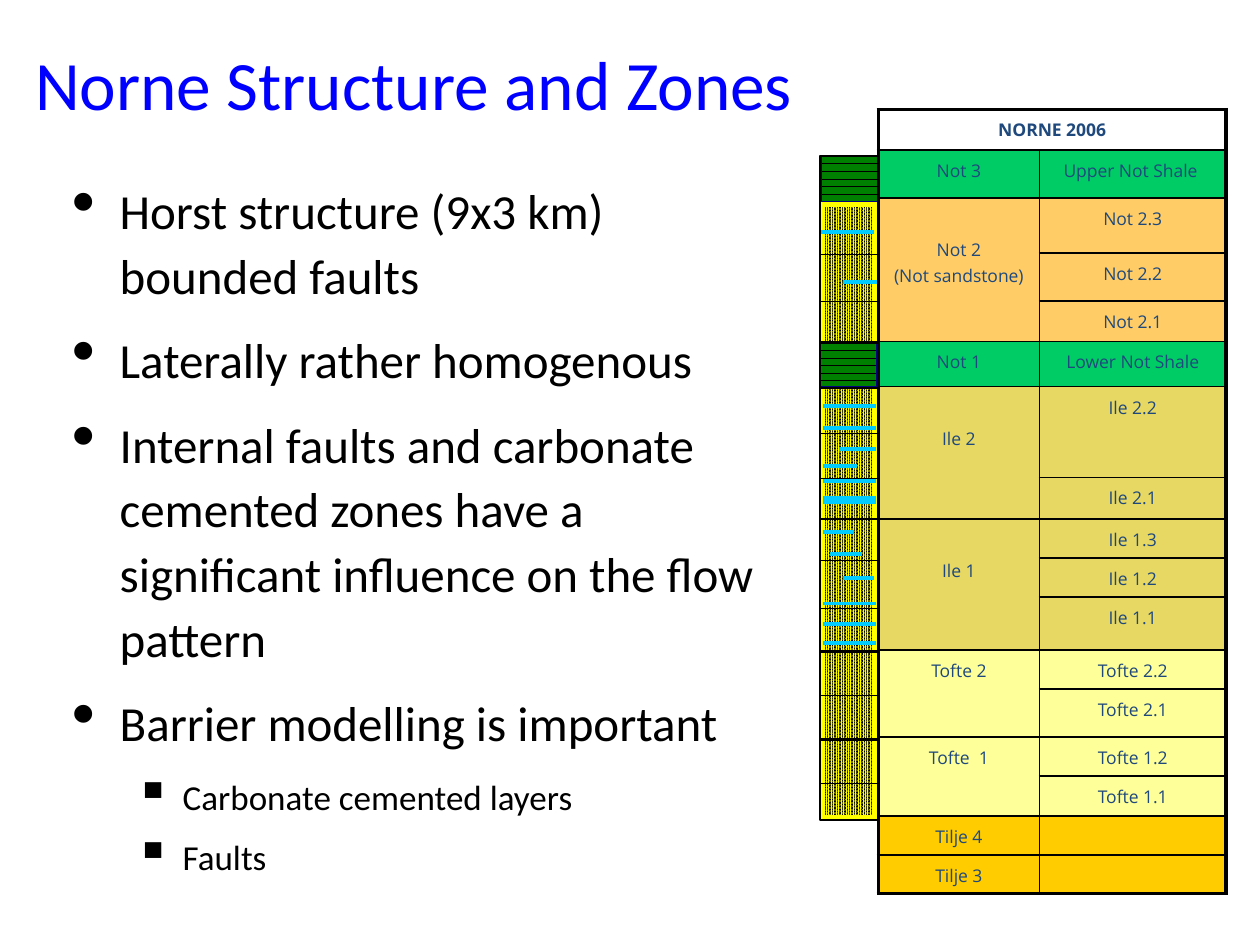
import copy
import dataclasses

import pptx
import pptx.dml.color
import pptx.enum.dml
import pptx.enum.shapes
import pptx.enum.text
import pptx.oxml
import pptx.oxml.ns
import pptx.util

Inches = pptx.util.Inches
Pt = pptx.util.Pt
PATTERN = pptx.enum.dml.MSO_PATTERN
ALIGN = pptx.enum.text.PP_ALIGN
ANCHOR = pptx.enum.text.MSO_ANCHOR
NAMESPACE = pptx.oxml.ns.nsdecls("a")


@dataclasses.dataclass(frozen=True)
class Theme:
    title: str = "0000FF"
    ink: str = "000000"
    table_ink: str = "1F497D"
    white: str = "FFFFFF"
    sand: str = "FFFF00"
    shale: str = "008000"
    shale_edge: str = "000080"
    cement: str = "00CCFF"
    green: str = "00CC66"
    orange: str = "FFCC66"
    olive: str = "E7D763"
    yellow: str = "FFFF99"
    gold: str = "FFCC00"
    body_font: str = "Calibri"
    table_font: str = "Open Sans"
    title_size: float = 39.6
    body_sizes: tuple = (28, 20)
    table_size: int = 10


def rgb(value):
    return pptx.dml.color.RGBColor.from_string(value)


def apply(target, values):
    for name, value in values.items():
        setattr(target, name, value)


class SlideBuilder:
    def __init__(self, slide, theme):
        self.slide = slide
        self.theme = theme

    def fill_para(self, para, text, size, color, font, **extra):
        para.text = text
        for span in para.runs:
            apply(span.font, {"size": Pt(size), "name": font, **extra})
            span.font.color.rgb = rgb(color)
        for line_break in para._p.xpath("a:br"):
            line_break.append(copy.deepcopy(para.runs[0]._r.rPr))

    def space_para(self, para, size):
        apply(para, {"line_spacing": 1.1, "space_after": Pt(size * 0.4)})

    def text_box(self, left, top, width, height, **frame_format):
        box = self.slide.shapes.add_textbox(*map(Inches, (left, top, width, height)))
        apply(box.text_frame, {"word_wrap": True, **frame_format})
        return box.text_frame

    def title(self, text, *place):
        frame = self.text_box(*place, vertical_anchor=ANCHOR.MIDDLE)
        theme = self.theme
        self.fill_para(frame.paragraphs[0], text, theme.title_size, theme.title, theme.body_font)

    def bullets(self, items, *place):
        frame = self.text_box(*place, margin_left=Inches(0.3))
        for index, (level, text) in enumerate(items):
            para = frame.add_paragraph() if index else frame.paragraphs[0]
            size = self.theme.body_sizes[level]
            self.fill_para(para, text, size, self.theme.ink, self.theme.body_font)
            self.space_para(para, size)
            para.level = level
            properties = para._p.get_or_add_pPr()
            properties.set("marL", str(Inches(0.38 + 0.5 * level)))
            properties.set("indent", str(-Inches(0.38)))
            for tag in ('buSzPct val="140000"', f'buChar char="{"•▪"[level]}"'):
                properties.append(pptx.oxml.parse_xml(f"<a:{tag} {NAMESPACE}/>"))

    def rectangle(self, place, line_color, line_width, pattern=None, colors=()):
        shape = self.slide.shapes.add_shape(
            pptx.enum.shapes.MSO_SHAPE.RECTANGLE, *map(Inches, place))
        shape.shadow.inherit = False
        shape.line.color.rgb = rgb(line_color)
        shape.line.width = Pt(line_width)
        if pattern is None:
            shape.fill.background()
            return
        shape.fill.patterned()
        shape.fill.pattern = pattern
        shape.fill.fore_color.rgb, shape.fill.back_color.rgb = map(rgb, colors)

    def level_line(self, left, right, y, color, width):
        line = self.slide.shapes.add_connector(
            pptx.enum.shapes.MSO_CONNECTOR.STRAIGHT, *map(Inches, (left, y, right, y)))
        line.line.color.rgb = rgb(color)
        line.line.width = Pt(width)
        line._element.spPr.append(pptx.oxml.parse_xml(f"<a:effectLst {NAMESPACE}/>"))

    def cell(self, table, row, column, text, fill, rows=1, columns=1, drop=0, bold=False):
        cell = table.cell(row, column)
        if rows > 1 or columns > 1:
            cell.merge(table.cell(row + rows - 1, column + columns - 1))
        outer_edges = {
            "lnL": column == 0,
            "lnR": column + columns == len(table.columns),
            "lnT": row == 0,
            "lnB": row + rows == len(table.rows),
        }
        for tag, outer in outer_edges.items():
            cell._tc.get_or_add_tcPr().append(pptx.oxml.parse_xml(
                f'<a:{tag} {NAMESPACE} w="{Pt(2.25 if outer else 1)}"><a:solidFill>'
                f'<a:srgbClr val="{self.theme.ink}"/></a:solidFill></a:{tag}>'))
        cell.fill.solid()
        cell.fill.fore_color.rgb = rgb(fill)
        cell.margin_top = Inches(0.05 + drop)
        para = cell.text_frame.paragraphs[0]
        para.alignment = ALIGN.CENTER
        theme = self.theme
        self.space_para(para, theme.table_size)
        if text:
            self.fill_para(para, text, theme.table_size, theme.table_ink, theme.table_font,
                           bold=bold)
        else:
            para._p.get_or_add_endParaRPr().set("sz", str(theme.table_size * 100))

    def zone_table(self, heading, zones, widths, heights, left, top):
        size = map(Inches, (left, top, sum(widths), sum(heights)))
        table = self.slide.shapes.add_table(len(heights), len(widths), *size).table
        for column, width in zip(table.columns, widths):
            column.width = Inches(width)
        for row, height in zip(table.rows, heights):
            row.height = Inches(height)
        self.cell(table, 0, 0, heading, self.theme.white, columns=2, bold=True)
        start = 1
        for name, fill, drop, subzones in zones:
            self.cell(table, start, 0, name, fill, rows=len(subzones), drop=drop)
            for row, subzone in enumerate(subzones, start):
                self.cell(table, row, 1, subzone, fill)
            start += len(subzones)


def main():
    deck = pptx.Presentation()
    apply(deck, {"slide_width": Inches(10), "slide_height": Inches(7.5)})
    theme = Theme()
    page = SlideBuilder(deck.slides.add_slide(deck.slide_layouts[6]), theme)

    zones = [
        ("Not 3", theme.green, 0, ["Upper Not Shale "]),
        ("Not 2\v(Not sandstone)", theme.orange, 0.25, ["Not 2.3", "Not 2.2", "Not 2.1"]),
        ("Not 1", theme.green, 0, ["Lower Not Shale"]),
        ("Ile 2", theme.olive, 0.25, ["Ile 2.2", "Ile 2.1"]),
        ("Ile 1", theme.olive, 0.25, ["Ile 1.3", "Ile 1.2", "Ile 1.1"]),
        ("Tofte 2", theme.yellow, 0, ["Tofte 2.2", "Tofte 2.1"]),
        ("Tofte  1", theme.yellow, 0, ["Tofte 1.2", "Tofte 1.1"]),
        ("Tilje 4", theme.gold, 0, [""]),
        ("Tilje 3", theme.gold, 0, [""]),
    ]
    heights = [0.32, 0.38, 0.44, 0.38, 0.32, 0.36, 0.72, 0.33, 0.31,
               0.31, 0.42, 0.31, 0.38, 0.31, 0.32, 0.3, 0.3]
    page.zone_table("NORNE 2006", zones, [1.28, 1.48], heights, 6.97, 0.87)
    page.title("Norne Structure and Zones", 0.18, 0.31, 6.55, 0.7)

    page.rectangle((6.52, 1.62, 0.43, 4.87), theme.sand, 3,
                   PATTERN.PERCENT_90, (theme.sand, theme.ink))
    page.level_line(6.53, 6.95, 3.97, theme.cement, 4.5)
    for place in ((6.51, 2.72, 0.45, 0.35), (6.52, 1.24, 0.45, 0.36)):
        page.rectangle(place, theme.shale_edge, 0.75,
                       PATTERN.DASHED_HORIZONTAL, (theme.ink, theme.shale))
    full_cement = [(6.53, 6.95, y) for y in (3.22, 3.4, 3.82, 4.79, 4.95, 5.1)]
    partial_cement = [(6.52, 6.94, 1.84), (6.69, 6.96, 2.24), (6.66, 6.95, 3.56),
                      (6.53, 6.8, 3.7), (6.53, 6.78, 4.22), (6.59, 6.84, 4.4),
                      (6.69, 6.94, 4.59)]
    for left, right, y in full_cement + partial_cement:
        page.level_line(left, right, y, theme.cement, 2.25)
    boundaries = {
        1.5: (2.72, 3.08, 4.12, 5.17, 5.87),
        0.5: (2.02, 2.39, 3.44, 3.8, 4.45, 4.83, 5.52, 6.22),
    }
    for width, depths in boundaries.items():
        for y in depths:
            page.level_line(6.52, 6.96, y, theme.ink, width)
    page.rectangle((6.51, 1.24, 0.46, 5.27), theme.ink, 1)

    page.bullets([
        (0, "Horst structure (9x3 km) bounded faults"),
        (0, "Laterally rather homogenous"),
        (0, "Internal faults and carbonate cemented zones have a significant "
            "influence on the flow pattern"),
        (0, "Barrier modelling is important"),
        (1, "Carbonate cemented layers"),
        (1, "Faults"),
    ], 0.27, 1.34, 5.89, 6.11)
    deck.save("out.pptx")


if __name__ == "__main__":
    main()
